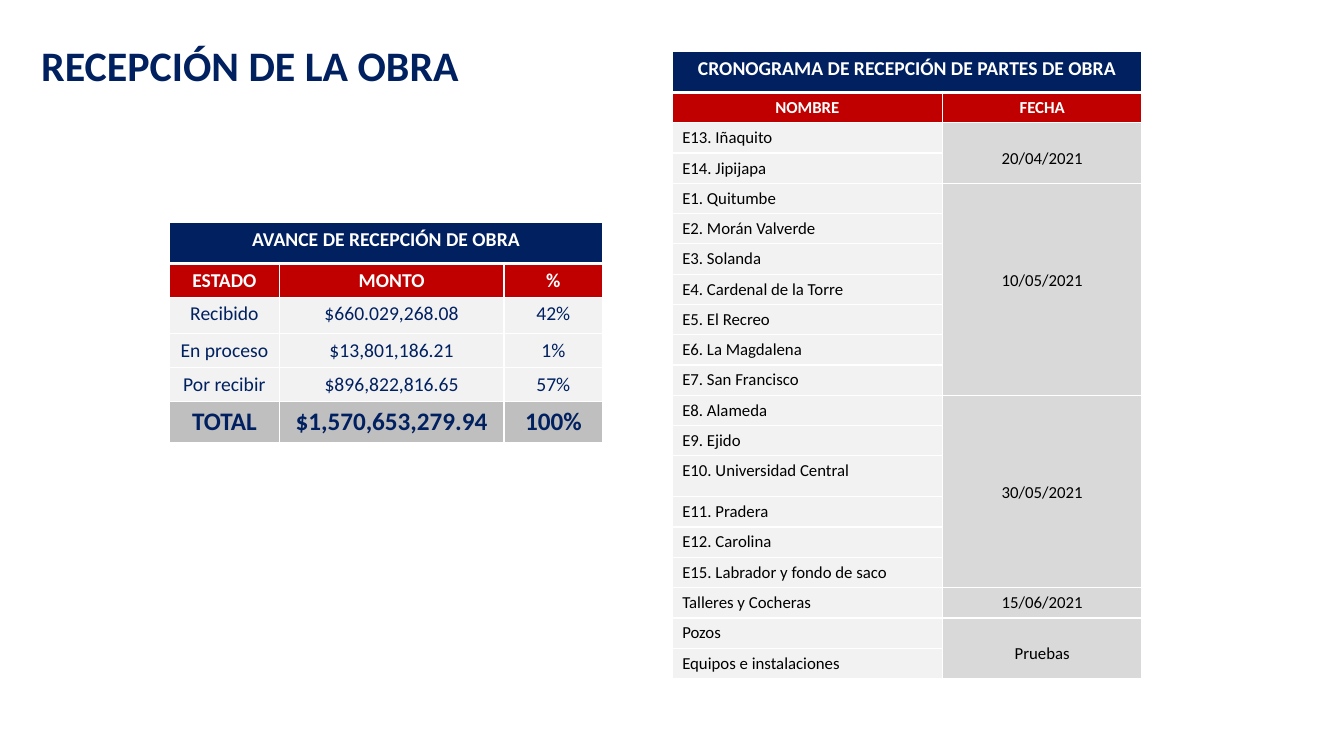
from dataclasses import dataclass

from lxml import etree
from pptx import Presentation
from pptx.dml.color import RGBColor
from pptx.enum import text
from pptx.oxml import ns
from pptx.util import Cm, Pt


@dataclass(frozen=True)
class Theme:
    font: str = "Calibri"
    navy: str = "002060"
    red: str = "C00000"
    white: str = "FFFFFF"
    black: str = "000000"
    pale: str = "F2F2F2"
    light: str = "D9D9D9"
    gray: str = "BFBFBF"
    heading: int = 30
    total: int = 18
    body: int = 14
    small: int = 12


THEME = Theme()
LEFT, CENTER = text.PP_ALIGN.LEFT, text.PP_ALIGN.CENTER
MARGIN, SMALL_LINE = 0.13, 0.52  # cell margin and 12 pt line height, cm

PROGRESS = [
    ("Recibido", "$660.029,268.08", "42%"),
    ("En proceso", "$13,801,186.21", "1%"),
    ("Por recibir", "$896,822,816.65", "57%"),
]
TOTAL = ("TOTAL", "$1,570,653,279.94", "100%")

# Date, lines it is moved down by, parts received on that date
SCHEDULE = [
    ("20/04/2021", 1, ["E13. Iñaquito", "E14. Jipijapa"]),
    ("10/05/2021", 4, ["E1. Quitumbe", "E2. Morán Valverde", "E3. Solanda",
                       "E4. Cardenal de la Torre", "E5. El Recreo",
                       "E6. La Magdalena", "E7. San Francisco"]),
    ("30/05/2021", 4, ["E8. Alameda", "E9. Ejido", "E10. Universidad Central",
                       "E11. Pradera", "E12. Carolina",
                       "E15. Labrador y fondo de saco"]),
    ("15/06/2021", 0, ["Talleres y Cocheras"]),
    ("Pruebas", 1, ["Pozos", "Equipos e instalaciones"]),
]
TALL_PART = "E10. Universidad Central"


def style_paragraph(paragraph, size, color, bold, align):
    paragraph.alignment = align
    paragraph.font.name = THEME.font
    paragraph.font.size = Pt(size)
    paragraph.font.bold = bold
    paragraph.font.color.rgb = RGBColor.from_string(color)


def add_borders(cell, top, bottom):
    properties = cell._tc.get_or_add_tcPr()
    for side, width in (("L", 1), ("R", 1), ("T", top), ("B", bottom)):
        line = etree.SubElement(properties, ns.qn(f"a:ln{side}"), w=str(Pt(width)))
        fill = etree.SubElement(line, ns.qn("a:solidFill"))
        etree.SubElement(fill, ns.qn("a:srgbClr"), val=THEME.white)


def fill_cell(cell, words, fill, size, color, bold=False, align=CENTER):
    cell.fill.solid()
    cell.fill.fore_color.rgb = RGBColor.from_string(fill)
    cell.text = words
    style_paragraph(cell.text_frame.paragraphs[0], size, color, bold, align)


def add_titled_table(slide, left, top, widths, heights, title, headers, header_size):
    """Add a table with a merged title row and a row of column headers."""
    table = slide.shapes.add_table(
        len(heights), len(widths), Cm(left), Cm(top),
        Cm(sum(widths)), Cm(sum(heights))).table
    for column, width in zip(table.columns, widths):
        column.width = Cm(width)
    for index, (row, height) in enumerate(zip(table.rows, heights)):
        row.height = Cm(height)
        for cell in row.cells:
            add_borders(cell, top=3 if index == 1 else 1, bottom=3 if index == 0 else 1)
    table.cell(0, 0).merge(table.cell(0, len(widths) - 1))
    fill_cell(table.cell(0, 0), title, THEME.navy, THEME.body, THEME.white, True)
    for index, header in enumerate(headers):
        fill_cell(table.cell(1, index), header, THEME.red, header_size, THEME.white, True)
    return table


def add_heading(slide, words):
    box = slide.shapes.add_textbox(Cm(0.79), Cm(0.86), Cm(15.44), Cm(1.55))
    box.text_frame.word_wrap = True
    box.text_frame.text = words
    style_paragraph(box.text_frame.paragraphs[0], THEME.heading, THEME.navy, True, LEFT)


def add_progress(slide):
    table = add_titled_table(
        slide, 4.27, 5.61, [2.77, 5.66, 2.49], [1.03, 0.85, 0.91, 0.86, 0.86, 1.03],
        "AVANCE DE RECEPCIÓN DE OBRA", ["ESTADO", "MONTO", "%"], THEME.body)
    for row, values in enumerate(PROGRESS + [TOTAL], start=2):
        is_total = values is TOTAL
        fill = THEME.gray if is_total else THEME.pale
        size = THEME.total if is_total else THEME.body
        for column, value in enumerate(values):
            fill_cell(table.cell(row, column), value, fill, size, THEME.navy, is_total)


def add_schedule(slide):
    parts = [part for _, _, group in SCHEDULE for part in group]
    heights = [1.03, 0.76] + [1.03 if part == TALL_PART else 0.76 for part in parts]
    table = add_titled_table(
        slide, 16.94, 1.3, [6.81, 5.03], heights,
        "CRONOGRAMA DE RECEPCIÓN DE PARTES DE OBRA", ["NOMBRE", "FECHA"], THEME.small)
    row = 2
    for date, lines_down, group in SCHEDULE:
        date_cell = table.cell(row, 1)
        if len(group) > 1:
            date_cell.merge(table.cell(row + len(group) - 1, 1))
        fill_cell(date_cell, date, THEME.light, THEME.small, THEME.black)
        date_cell.margin_top = Cm(MARGIN + lines_down * SMALL_LINE)
        for part in group:
            fill_cell(table.cell(row, 0), part, THEME.pale, THEME.small,
                      THEME.black, align=LEFT)
            row += 1


def main():
    presentation = Presentation()
    presentation.slide_width, presentation.slide_height = Cm(33.87), Cm(19.05)
    slide = presentation.slides.add_slide(presentation.slide_layouts[6])
    add_heading(slide, "RECEPCIÓN DE LA OBRA")
    add_progress(slide)
    add_schedule(slide)
    presentation.save("out.pptx")


if __name__ == "__main__":
    main()
